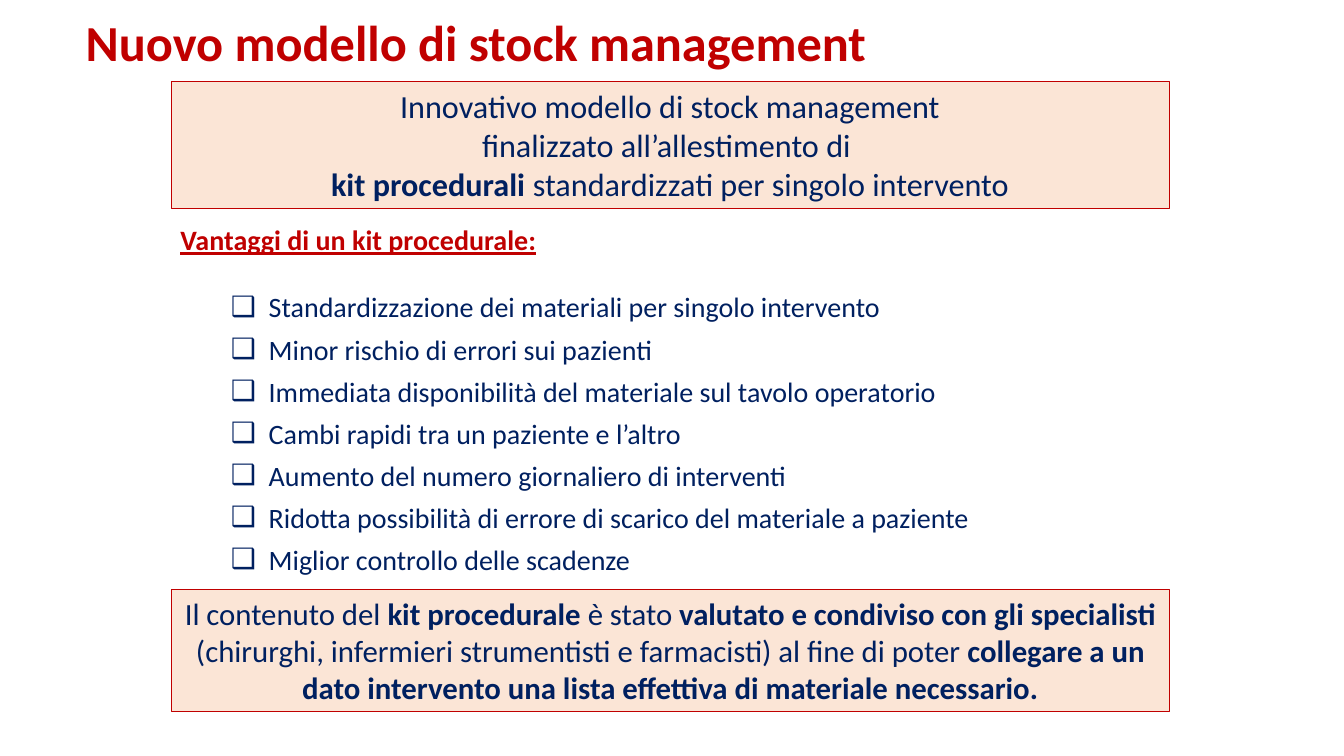
from dataclasses import dataclass

from lxml import etree
from pptx import Presentation
from pptx.dml.color import RGBColor
from pptx.enum.shapes import MSO_SHAPE
from pptx.enum.text import MSO_ANCHOR, MSO_AUTO_SIZE, PP_ALIGN
from pptx.oxml.ns import qn
from pptx.util import Pt

RECTANGLE = MSO_SHAPE.RECTANGLE
TOP, MIDDLE = MSO_ANCHOR.TOP, MSO_ANCHOR.MIDDLE
LEFT, CENTER, JUSTIFY = PP_ALIGN.LEFT, PP_ALIGN.CENTER, PP_ALIGN.JUSTIFY
NO_AUTOFIT = MSO_AUTO_SIZE.NONE

FONT = "Calibri"
RED, NAVY, PEACH = "C00000", "002060", "FBE5D6"
PANEL_LEFT, PANEL_WIDTH = 122.4, 712.8


@dataclass(frozen=True)
class Span:
    text: str
    bold: bool = False


@dataclass(frozen=True)
class Panel:
    top: float
    height: float
    size: float
    lines: tuple[tuple[Span, ...], ...]


PANELS = (
    Panel(58.3, 90.9, 23, (
        (Span("Innovativo modello di stock management"),),
        (Span("finalizzato all’allestimento di "),),
        (Span("kit procedurali ", True), Span("standardizzati per singolo intervento")),
    )),
    Panel(421.2, 87.3, 22, (
        (
            Span("Il contenuto del "),
            Span("kit procedurale ", True),
            Span("è stato "),
            Span("valutato e condiviso con gli specialisti ", True),
            Span("(chirurghi, infermieri strumentisti e farmacisti) al fine di poter "),
            Span("collegare a un dato intervento una lista effettiva di materiale necessario.", True),
        ),
    )),
)

ADVANTAGES = (
    "Standardizzazione dei materiali per singolo intervento",
    "Minor rischio di errori sui pazienti",
    "Immediata disponibilità del materiale sul tavolo operatorio",
    "Cambi rapidi tra un paziente e l’altro",
    "Aumento del numero giornaliero di interventi",
    "Ridotta possibilità di errore di scarico del materiale a paziente",
    "Miglior controllo delle scadenze",
)


def rgb(value: str) -> RGBColor:
    return RGBColor.from_string(value)


def style(run, size: float, color: str, bold: bool = False, underline: bool = False) -> None:
    run.font.name = FONT
    run.font.size = Pt(size)
    run.font.color.rgb = rgb(color)
    run.font.bold = bold
    run.font.underline = underline


def place(shape, left: float, top: float, width: float, height: float, anchor) -> None:
    shape.left, shape.top = Pt(left), Pt(top)
    shape.width, shape.height = Pt(width), Pt(height)
    frame = shape.text_frame
    frame.word_wrap = True
    frame.auto_size = NO_AUTOFIT
    frame.vertical_anchor = anchor


def set_bullet(paragraph, mark: str | None, margin: float, indent: float) -> None:
    properties = paragraph._p.get_or_add_pPr()
    properties.set("marL", str(Pt(margin)))
    properties.set("indent", str(Pt(indent)))
    if mark:
        etree.SubElement(properties, qn("a:buChar")).set("char", mark)
    else:
        etree.SubElement(properties, qn("a:buNone"))


def draw_panel(slide, panel: Panel) -> None:
    box = slide.shapes.add_shape(RECTANGLE, 0, 0, 0, 0)
    place(box, PANEL_LEFT, panel.top, PANEL_WIDTH, panel.height, TOP)
    box.shadow.inherit = False
    box.fill.solid()
    box.fill.fore_color.rgb = rgb(PEACH)
    box.line.color.rgb = rgb(RED)
    box.line.width = Pt(0.75)
    frame = box.text_frame
    for index, line in enumerate(panel.lines):
        paragraph = frame.add_paragraph() if index else frame.paragraphs[0]
        paragraph.alignment = CENTER
        for span in line:
            run = paragraph.add_run()
            run.text = span.text
            style(run, panel.size, NAVY, span.bold)


def fill_title(title) -> None:
    place(title, 54, 0, 851.8, 64, MIDDLE)
    title.text_frame.text = "Nuovo modello di stock management"
    heading = title.text_frame.paragraphs[0]
    heading.alignment = LEFT
    heading.line_spacing = 0.9
    style(heading.runs[0], 36, RED, bold=True)


def fill_advantages(body) -> None:
    place(body, 121.7, 155.5, 712.1, 262.1, TOP)
    frame = body.text_frame
    frame.text = "Vantaggi di un kit procedurale:"
    heading = frame.paragraphs[0]
    set_bullet(heading, None, 0, 0)
    heading.alignment = LEFT
    heading.space_before, heading.space_after = Pt(0), Pt(24)
    style(heading.runs[0], 20, RED, bold=True, underline=True)
    for advantage in ADVANTAGES:
        item = frame.add_paragraph()
        item.text = advantage
        item.level = 1
        set_bullet(item, "❑", 63, -27)
        item.alignment = JUSTIFY
        item.space_before, item.space_after = Pt(0), Pt(6)
        style(item.runs[0], 20, NAVY)


def main() -> None:
    deck = Presentation()
    deck.slide_width, deck.slide_height = Pt(960), Pt(540)
    slide = deck.slides.add_slide(deck.slide_layouts[1])

    # Title and list of advantages
    fill_title(slide.shapes.title)
    fill_advantages(slide.placeholders[1])

    # Framed statements above and below the list
    for panel in PANELS:
        draw_panel(slide, panel)

    deck.save("out.pptx")


if __name__ == "__main__":
    main()
